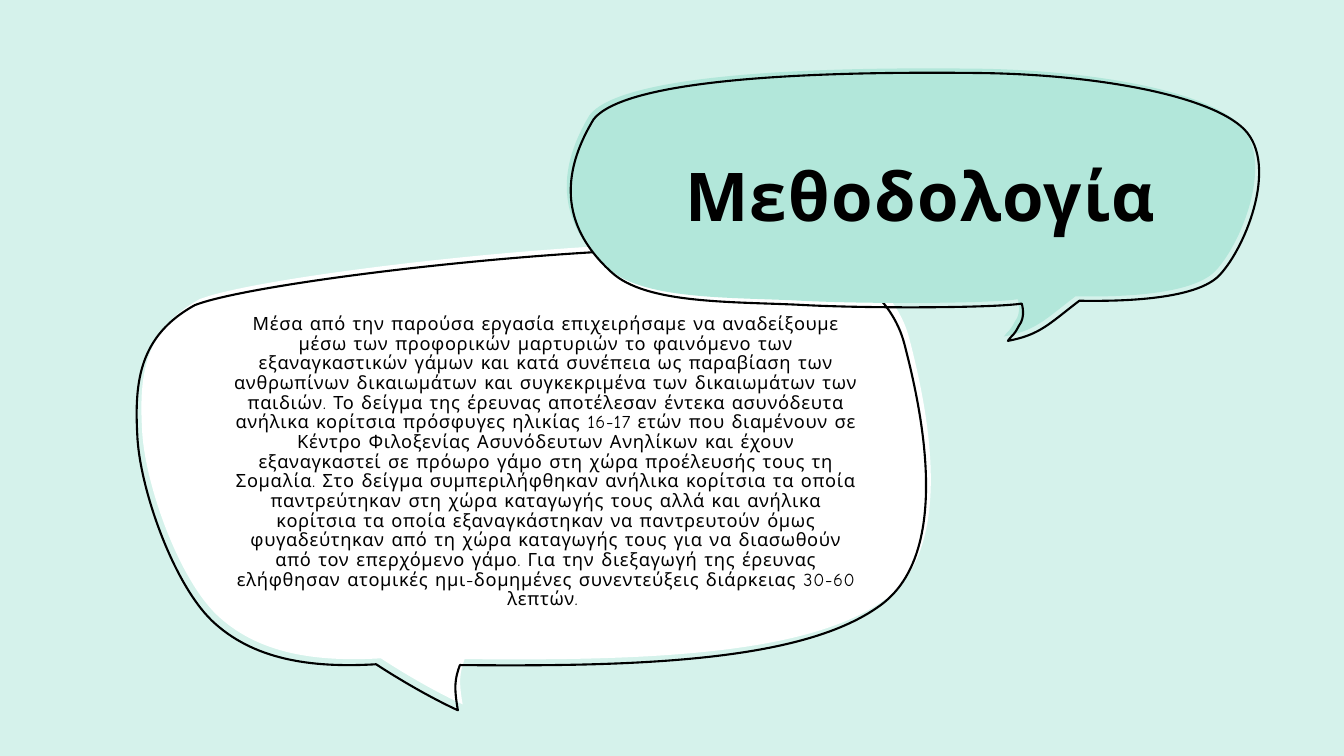
from dataclasses import dataclass

from lxml import etree
from pptx import Presentation
from pptx.dml.color import RGBColor
from pptx.enum import shapes as s
from pptx.enum import text as t
from pptx.oxml import ns
from pptx.util import Cm, Pt

BLACK = RGBColor(0x00, 0x00, 0x00)
WHITE = RGBColor(0xFF, 0xFF, 0xFF)
MINT = RGBColor(0xB2, 0xE7, 0xDA)
PALE_MINT = RGBColor(0xD5, 0xF2, 0xEB)
FONT = "Comic Neue"

TITLE = "Μεθοδολογία"
BODY = (
    "Μέσα από την παρούσα εργασία επιχειρήσαμε να αναδείξουμε μέσω των "
    "προφορικών μαρτυριών το φαινόμενο των εξαναγκαστικών γάμων και κατά "
    "συνέπεια ως παραβίαση των ανθρωπίνων δικαιωμάτων και συγκεκριμένα των "
    "δικαιωμάτων των παιδιών. Το δείγμα της έρευνας αποτέλεσαν έντεκα "
    "ασυνόδευτα ανήλικα κορίτσια πρόσφυγες ηλικίας 16-17 ετών που διαμένουν "
    "σε Κέντρο Φιλοξενίας Ασυνόδευτων Ανηλίκων και έχουν εξαναγκαστεί σε "
    "πρόωρο γάμο στη χώρα προέλευσής τους τη Σομαλία. Στο δείγμα "
    "συμπεριλήφθηκαν ανήλικα κορίτσια τα οποία παντρεύτηκαν στη χώρα "
    "καταγωγής τους αλλά και ανήλικα κορίτσια τα οποία εξαναγκάστηκαν να "
    "παντρευτούν όμως φυγαδεύτηκαν από τη χώρα καταγωγής τους για να "
    "διασωθούν από τον επερχόμενο γάμο. Για την διεξαγωγή της έρευνας "
    "ελήφθησαν ατομικές ημι-δομημένες συνεντεύξεις διάρκειας 30-60 λεπτών. "
)

Point = tuple[float, float]
Area = tuple[float, float, float, float]


@dataclass
class Bubble:
    """A closed chain of cubic curves in cm; each curve is two controls and an end."""
    fill: RGBColor
    line_shift: Point
    area: Area
    start: Point
    curves: list[tuple[Point, Point, Point]]


@dataclass
class Caption:
    words: str
    area: Area
    letter_spacing: int
    font: dict[str, object]
    para: dict[str, object]


BUBBLES = [
    Bubble(WHITE, (-0.12, 0.15), (3.56, 6.12, 19.91, 11.63), (9.6, 16.59), [
        ((7.92, 16.69), (6.48, 16.46), (5.46, 15.49)),
        ((4.47, 14.53), (3.63, 12.12), (3.58, 10.8)),
        ((3.51, 9.47), (3.63, 8.31), (5.03, 7.54)),
        ((6.63, 6.91), (15.9, 5.84), (19.74, 6.17)),
        ((21.51, 6.38), (22.61, 7.37), (22.91, 8.51)),
        ((23.32, 10.08), (24.16, 13.77), (22.3, 15.11)),
        ((20.42, 16.48), (16.46, 16.66), (11.71, 16.61)),
        ((11.58, 16.97), (11.56, 17.17), (11.66, 17.75)),
        ((10.62, 17.27), (9.6, 16.59), (9.6, 16.59)),
    ]),
    Bubble(MINT, (0.1, 0.11), (14.27, 1.73, 17.35, 6.76), (25.65, 7.54), [
        ((24.99, 7.65), (21.77, 7.67), (20.02, 7.57)),
        ((18.26, 7.49), (16.18, 7.54), (15.32, 6.76)),
        ((14.45, 5.97), (13.74, 4.75), (14.86, 2.9)),
        ((15.77, 1.73), (21.77, 1.7), (24.49, 1.73)),
        ((27.2, 1.75), (30.15, 2.21), (31.17, 3.07)),
        ((32.18, 3.91), (31.32, 6.1), (30.63, 6.83)),
        ((29.95, 7.54), (27.56, 7.47), (27.1, 7.47)),
        ((26.34, 8.05), (26.11, 8.33), (25.3, 8.48)),
        ((25.45, 8.28), (25.43, 8.38), (25.58, 8.1)),
        ((25.76, 7.87), (25.65, 7.54), (25.65, 7.54)),
    ]),
]

TITLE_CAPTION = Caption(
    TITLE, (16.33, 3.01, 13.74, 3.78), 100,
    {"name": FONT, "size": Pt(48), "bold": True},
    {"alignment": t.PP_ALIGN.CENTER},
)
BODY_CAPTION = Caption(
    BODY, (5.62, 7.98, 16.28, 7.34), 50,
    {"name": FONT, "size": Pt(13), "bold": False},
    {"alignment": t.PP_ALIGN.CENTER, "line_spacing": 0.9},
)


def add_outline(page, bubble: Bubble, shift: Point):
    """Span the bubble's area with a freeform, then give it the curved path."""
    left, top, width, height = bubble.area
    x, y = left + shift[0], top + shift[1]
    corners = [(x, y), (x + width, y), (x + width, y + height), (x, y + height)]
    corners = [(Cm(a), Cm(b)) for a, b in corners]
    builder = page.shapes.build_freeform(*corners[0])
    builder.add_line_segments(corners[1:], close=True)
    shape = builder.convert_to_shape()
    shape.shadow.inherit = False

    outline = shape._element.find(".//" + ns.qn("a:path"))
    for step in list(outline):
        outline.remove(step)
    steps = [("a:moveTo", (bubble.start,))]
    steps += [("a:cubicBezTo", curve) for curve in bubble.curves]
    for tag, points in steps:
        step = etree.SubElement(outline, ns.qn(tag))
        for a, b in points:
            etree.SubElement(step, ns.qn("a:pt"),
                             x=str(Cm(a - left)), y=str(Cm(b - top)))
    etree.SubElement(outline, ns.qn("a:close"))
    return shape


def paint(shape, color: RGBColor) -> None:
    shape.fill.solid()
    shape.fill.fore_color.rgb = color
    shape.line.fill.background()


def draw_bubble(page, bubble: Bubble) -> None:
    paint(add_outline(page, bubble, (0, 0)), bubble.fill)
    edge = add_outline(page, bubble, bubble.line_shift)
    edge.fill.background()
    edge.line.color.rgb = BLACK
    edge.line.width = Pt(1.5)


def write_caption(box, caption: Caption) -> None:
    box.left, box.top, box.width, box.height = map(Cm, caption.area)
    frame = box.text_frame
    frame.word_wrap = True
    frame.auto_size = t.MSO_AUTO_SIZE.NONE
    frame.vertical_anchor = t.MSO_ANCHOR.MIDDLE
    para = frame.paragraphs[0]
    span = para.add_run()
    span.text = caption.words
    for target, values in ((para, caption.para), (span.font, caption.font)):
        for key, value in values.items():
            setattr(target, key, value)
    span.font.color.rgb = BLACK
    span._r.get_or_add_rPr().set("spc", str(caption.letter_spacing))


def main() -> None:
    deck = Presentation()
    deck.slide_width, deck.slide_height = Cm(33.87), Cm(19.05)
    page = deck.slides.add_slide(deck.slide_layouts.get_by_name("Title Only"))
    page.background.fill.solid()
    page.background.fill.fore_color.rgb = PALE_MINT

    backdrop = page.shapes.add_shape(
        s.MSO_SHAPE.RECTANGLE, 0, 0, deck.slide_width, deck.slide_height)
    backdrop.shadow.inherit = False
    paint(backdrop, PALE_MINT)

    for bubble in BUBBLES:
        draw_bubble(page, bubble)

    title = page.shapes.title
    page.shapes._spTree.append(title._element)  # bring the title above its bubble
    write_caption(title, TITLE_CAPTION)
    write_caption(page.shapes.add_textbox(0, 0, 0, 0), BODY_CAPTION)
    deck.save("out.pptx")


if __name__ == "__main__":
    main()
